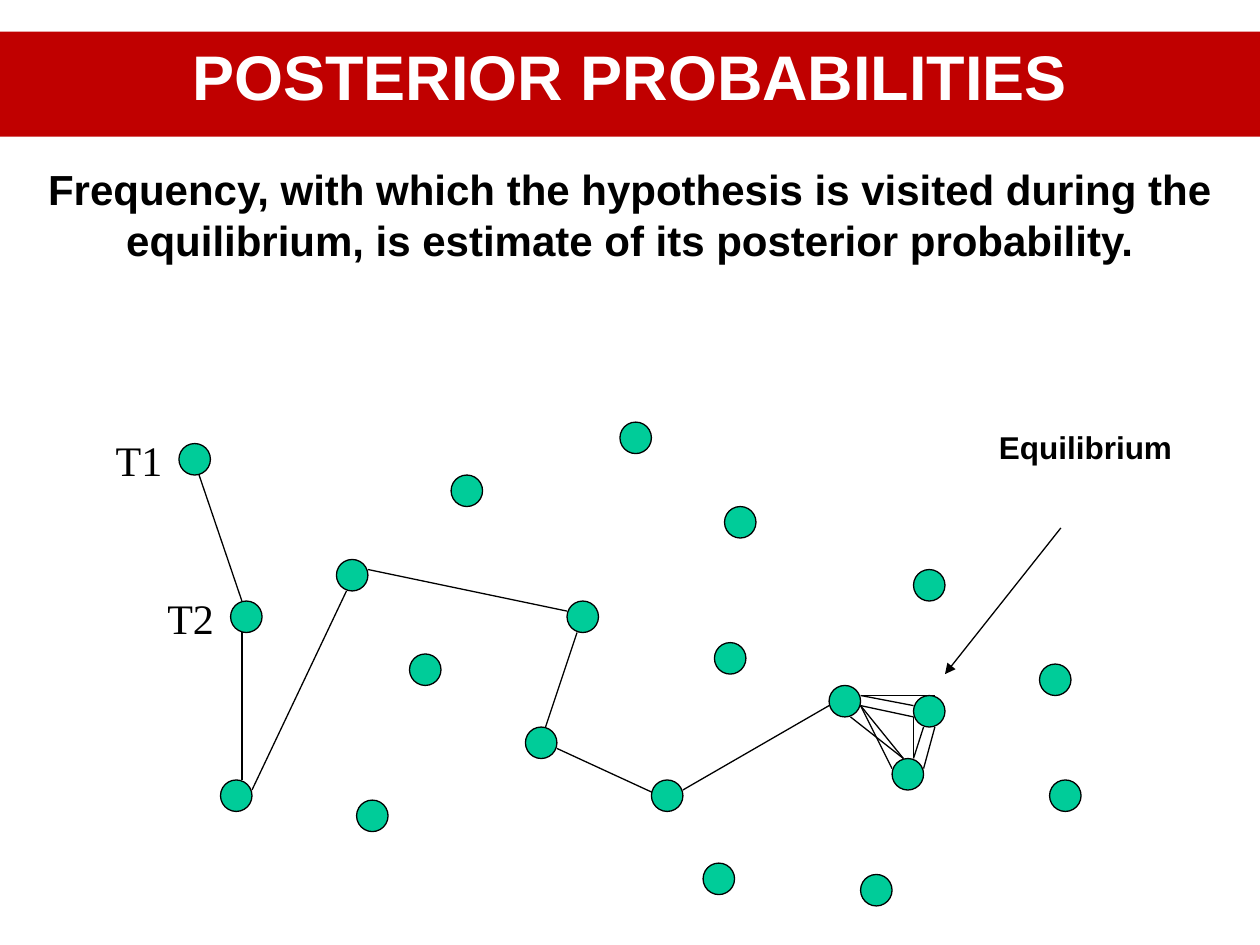
from typing import NamedTuple

from lxml.etree import SubElement
from pptx import Presentation
from pptx.dml.color import RGBColor
from pptx.enum.shapes import MSO_CONNECTOR, MSO_SHAPE
from pptx.enum.text import MSO_ANCHOR, MSO_AUTO_SIZE, PP_ALIGN
from pptx.oxml.ns import qn
from pptx.util import Inches, Pt

BLACK, WHITE, RED, GREEN = "000000", "FFFFFF", "C00000", "00CC99"
SIZE = 0.25


class Dot(NamedTuple):
    x: float
    y: float


class Line(NamedTuple):
    x1: float
    y1: float
    x2: float
    y2: float
    arrow: bool = False


class Label(NamedTuple):
    text: str
    x: float
    y: float
    w: float
    h: float
    size: int
    font: str = "Arial"
    bold: bool = True
    wrap: bool = False


DOTS = [
    Dot(1.42, 3.52), Dot(2.67, 4.44), Dot(1.83, 4.77), Dot(1.75, 6.19),
    Dot(4.92, 3.35), Dot(3.25, 5.19), Dot(4.17, 5.77), Dot(4.5, 4.77),
    Dot(5.58, 6.85), Dot(7.25, 5.52), Dot(7.25, 4.52), Dot(6.58, 5.44),
    Dot(7.08, 6.02), Dot(5.67, 5.1), Dot(6.83, 6.94), Dot(8.33, 6.19),
    Dot(3.58, 3.77), Dot(5.75, 4.02), Dot(8.25, 5.27), Dot(2.83, 6.35),
]
# This dot covers the end of the walk's line into it
FRONT = Dot(5.17, 6.19)

WALK = [
    Line(1.58, 3.77, 1.92, 4.77), Line(1.92, 5.02, 1.92, 6.19),
    Line(2, 6.27, 2.75, 4.69), Line(2.92, 4.52, 4.5, 4.85),
    Line(4.58, 5.02, 4.33, 5.77), Line(4.42, 5.94, 5.31, 6.35),
    Line(5.42, 6.27, 6.58, 5.6),
]
CYCLE = [
    Line(6.83, 5.52, 7.25, 5.6), Line(7.33, 5.77, 7.25, 6.02),
    Line(7.08, 6.1, 6.83, 5.6), Line(6.83, 5.6, 7.25, 5.69),
    Line(7.25, 5.69, 7.25, 6.02), Line(7.17, 6.02, 6.75, 5.69),
    Line(6.83, 5.6, 7.17, 6.02), Line(7.33, 6.1, 7.42, 5.77),
    Line(7.42, 5.52, 6.83, 5.52),
]
POINTER = Line(8.42, 4.19, 7.5, 5.35, arrow=True)

LABELS = [
    Label("T1", 0.82, 3.4, 0.57, 0.5, 24, "Times New Roman", False),
    Label("T2", 1.23, 4.65, 0.57, 0.5, 24, "Times New Roman", False),
    Label("Equilibrium", 7.83, 3.35, 1.59, 0.4, 18),
    Label("Frequency, with which the hypothesis is visited during the "
          "equilibrium, is estimate of its posterior probability.",
          0, 1.25, 10, 0.91, 24, wrap=True),
]


def paint(fmt, color: str) -> None:
    """Give a fill one solid colour."""
    fmt.solid()
    fmt.fore_color.rgb = RGBColor.from_string(color)


def style(frame, size: int, font: str, bold: bool, color: str) -> None:
    for run in frame.paragraphs[0].runs:
        run.font.size = Pt(size)
        run.font.name = font
        run.font.bold = bold
        paint(run.font.fill, color)


def add_dot(shapes, dot: Dot) -> None:
    oval = shapes.add_shape(MSO_SHAPE.OVAL, Inches(dot.x), Inches(dot.y),
                            Inches(SIZE), Inches(SIZE))
    oval.shadow.inherit = False
    paint(oval.fill, GREEN)
    paint(oval.line.fill, BLACK)
    oval.line.width = Pt(0.75)


def add_line(shapes, line: Line) -> None:
    link = shapes.add_connector(
        MSO_CONNECTOR.STRAIGHT, Inches(line.x1), Inches(line.y1),
        Inches(line.x2), Inches(line.y2))
    paint(link.line.fill, BLACK)
    link.line.width = Pt(0.75)
    props = link._element.spPr
    if line.arrow:
        SubElement(props.find(qn("a:ln")), qn("a:tailEnd"), type="triangle")
    SubElement(props, qn("a:effectLst"))


def add_label(shapes, label: Label) -> None:
    box = shapes.add_textbox(Inches(label.x), Inches(label.y),
                             Inches(label.w), Inches(label.h))
    frame = box.text_frame
    frame.text = label.text
    frame.word_wrap = label.wrap
    frame.auto_size = MSO_AUTO_SIZE.SHAPE_TO_FIT_TEXT
    if label.wrap:
        frame.paragraphs[0].alignment = PP_ALIGN.CENTER
    style(frame, label.size, label.font, label.bold, BLACK)


def set_title(title, text: str) -> None:
    title.left, title.top = Inches(0), Inches(0.25)
    title.width, title.height = Inches(10), Inches(0.71)
    paint(title.fill, RED)
    frame = title.text_frame
    frame.text = text
    frame.word_wrap = True
    frame.auto_size = MSO_AUTO_SIZE.SHAPE_TO_FIT_TEXT
    frame.vertical_anchor = MSO_ANCHOR.TOP
    frame.paragraphs[0].alignment = PP_ALIGN.CENTER
    style(frame, 36, "Arial", True, WHITE)


def main() -> None:
    deck = Presentation()
    deck.slide_width, deck.slide_height = Inches(10), Inches(7.5)
    slide = deck.slides.add_slide(deck.slide_layouts[5])
    shapes = slide.shapes
    set_title(shapes.title, "POSTERIOR PROBABILITIES")
    for dot in DOTS:
        add_dot(shapes, dot)
    for line in [*WALK, *CYCLE, POINTER]:
        add_line(shapes, line)
    add_dot(shapes, FRONT)
    for label in LABELS:
        add_label(shapes, label)
    deck.save("out.pptx")


if __name__ == "__main__":
    main()
